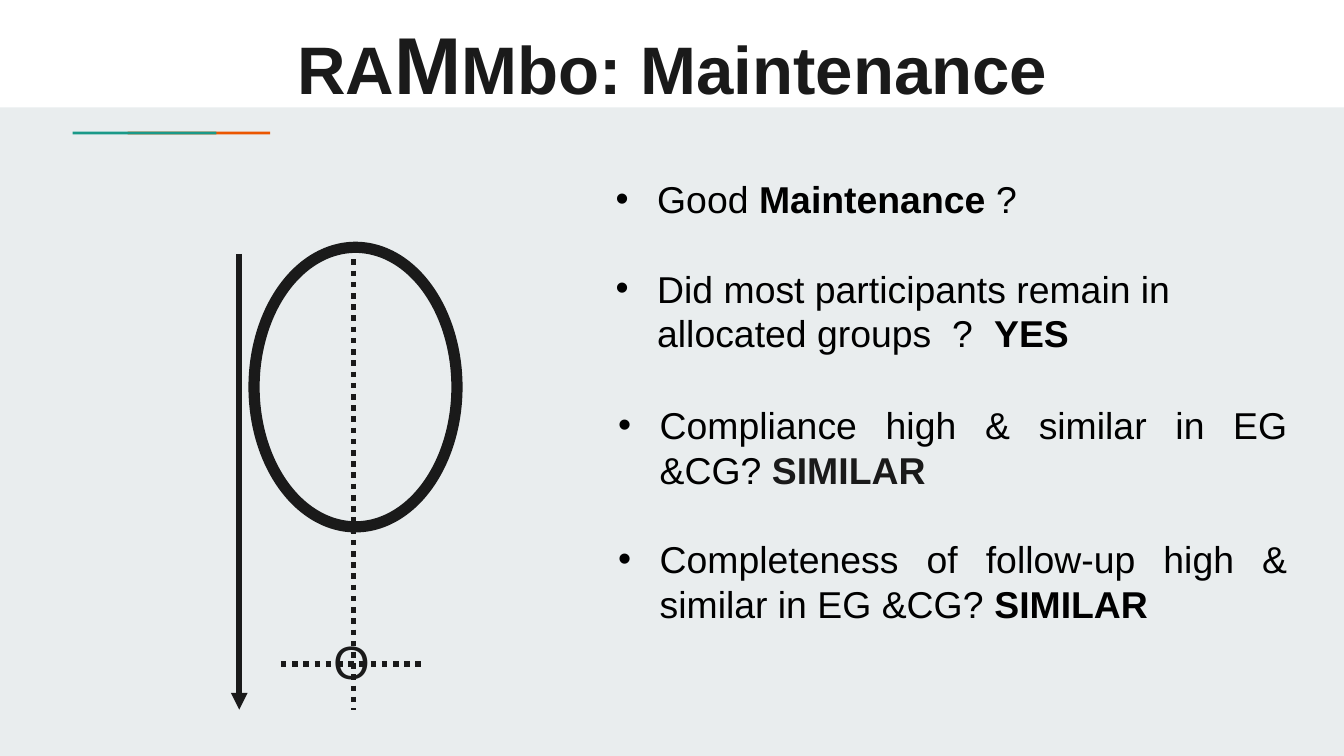
from lxml.etree import SubElement
from pptx import Presentation
from pptx.dml.color import RGBColor
from pptx.enum.dml import MSO_LINE
from pptx.enum.shapes import MSO_CONNECTOR, MSO_SHAPE
from pptx.enum.text import MSO_ANCHOR, PP_ALIGN
from pptx.oxml.ns import qn
from pptx.util import Inches, Pt

# The slide is a 16:9 grid of 100 columns; rows are as high as columns are wide.
COLS, ROWS = 100, 56.25
INK, BLACK, WHITE = "1A1A1A", "000000", "FFFFFF"
PAPER, TEAL, ORANGE = "E9EDEE", "1A9988", "EB5600"


def grid(*cells):
    return [Inches(round(c * 10 / COLS, 4)) for c in cells]


def color(value):
    return RGBColor.from_string(value)


def add_runs(p, runs, **common):
    for text, fmt in runs:
        r = p.add_run()
        r.text = text
        values = {"name": "Arial", "color": BLACK, **common, **fmt}
        r.font.color.rgb = color(values.pop("color"))
        for key, value in values.items():
            setattr(r.font, key, value)


def add_text(s, box, insets, **frame):
    """Add an empty text box; insets are left, top, right, bottom in cells."""
    tf = s.shapes.add_textbox(*grid(*box)).text_frame
    sides = ("margin_left", "margin_top", "margin_right", "margin_bottom")
    values = {"word_wrap": True, **dict(zip(sides, grid(*insets))), **frame}
    for key, value in values.items():
        setattr(tf, key, value)
    return tf


def add_bar(s, box, fill):
    sp = s.shapes.add_shape(MSO_SHAPE.RECTANGLE, *grid(*box))
    sp.shadow.inherit = False
    sp.fill.solid()
    sp.fill.fore_color.rgb = color(fill)
    sp.line.fill.background()


def add_line(s, start, end, dash=None, arrow=False):
    sp = s.shapes.add_connector(MSO_CONNECTOR.STRAIGHT, *grid(*start, *end))
    sp.line.color.rgb = color(INK)
    sp.line.width = Pt(3)
    if dash:
        sp.line.dash_style = dash
    spPr = sp.element.spPr
    if arrow:
        SubElement(spPr.find(qn("a:ln")), qn("a:tailEnd"), type="triangle")
    SubElement(spPr, qn("a:effectLst"))


def add_bullet(p, indent):
    pPr = p._p.get_or_add_pPr()
    pPr.set("marL", str(indent))
    pPr.set("indent", str(-indent))
    clr = SubElement(pPr, qn("a:buClr"))
    SubElement(clr, qn("a:srgbClr"), val=BLACK)
    SubElement(pPr, qn("a:buFont"), typeface="Arial")
    SubElement(pPr, qn("a:buChar"), char="•")


def header(s, x, y, w, h):
    add_bar(s, (x, y, w, h), WHITE)
    rule_y = y + h + 1.8
    add_bar(s, (x + 9.5, rule_y, 10.6, 0.2), ORANGE)
    add_bar(s, (x + 5.4, rule_y, 10.7, 0.2), TEAL)
    tf = add_text(s, (x + 8, y, w - 15.9, h + 1), (1, 1, 1, 0.8),
                  vertical_anchor=MSO_ANCHOR.BOTTOM)
    p = tf.paragraphs[0]
    p.alignment = PP_ALIGN.CENTER
    add_runs(p, [("RA", {}), ("M", {"size": Pt(43.2)}), ("Mbo: Maintenance", {})],
             size=Pt(36), bold=True, color=INK)


def trial_diagram(s, x, y, w, h):
    """Participant ellipse with a time arrow and a dotted outcome cross."""
    axis, bottom = x + 8.5, y + h
    add_line(s, (x, y + 0.5), (x, bottom), arrow=True)
    ring = s.shapes.add_shape(MSO_SHAPE.OVAL, *grid(x + 1.1, y, w - 1.1, 20.8))
    ring.shadow.inherit = False
    ring.fill.background()
    ring.line.color.rgb = color(INK)
    ring.line.width = Pt(6)
    add_line(s, (axis, y + 0.9), (axis, bottom), MSO_LINE.ROUND_DOT)
    cross_y = bottom - 3.4
    add_line(s, (axis - 5.4, cross_y), (axis + 5, cross_y), MSO_LINE.ROUND_DOT)
    tf = add_text(s, (axis - 2.3, cross_y - 2.7, 3.9, 5), (0.8, 0.4, 0.8, 0.4),
                  word_wrap=False)
    add_runs(tf.paragraphs[0], [("O", {})], size=Pt(25), color=INK)


def questions(s, box, insets, items, align):
    tf = add_text(s, box, insets)
    for i, runs in enumerate(items):
        p = tf.add_paragraph() if i else tf.paragraphs[0]
        add_bullet(p, Inches(0.31))
        p.alignment = align
        p.line_spacing = Pt(24)
        p.space_before = Pt(24 if i else 0)
        add_runs(p, runs, size=Pt(20))


def main():
    prs = Presentation()
    prs.slide_width, prs.slide_height = grid(COLS, ROWS)
    s = prs.slides.add_slide(prs.slide_layouts[6])
    s.background.fill.solid()
    s.background.fill.fore_color.rgb = color(PAPER)

    strong = {"bold": True}
    header(s, 0, 0, COLS, 8)
    trial_diagram(s, 17.8, 18.4, 16.2, 34.4)
    questions(s, (45, 12.7, 47.8, 14.3), (0.8, 0.4, 0.8, 0.4), [
        [("Good ", {}), ("Maintenance ", strong), ("?", {})],
        [("Did most participants remain in allocated groups  ?  ", {}),
         ("YES", strong)],
    ], PP_ALIGN.LEFT)
    questions(s, (45, 22.7, 51.8, 27.9), (1, 7.2, 1, 0.5), [
        [("Compliance high & similar in EG &CG? ", {}),
         ("SIMILAR", {"bold": True, "color": INK})],
        [("Completeness of follow-up high & similar in EG &CG? ", {}),
         ("SIMILAR", strong)],
    ], PP_ALIGN.JUSTIFY)
    prs.save("out.pptx")


if __name__ == "__main__":
    main()
